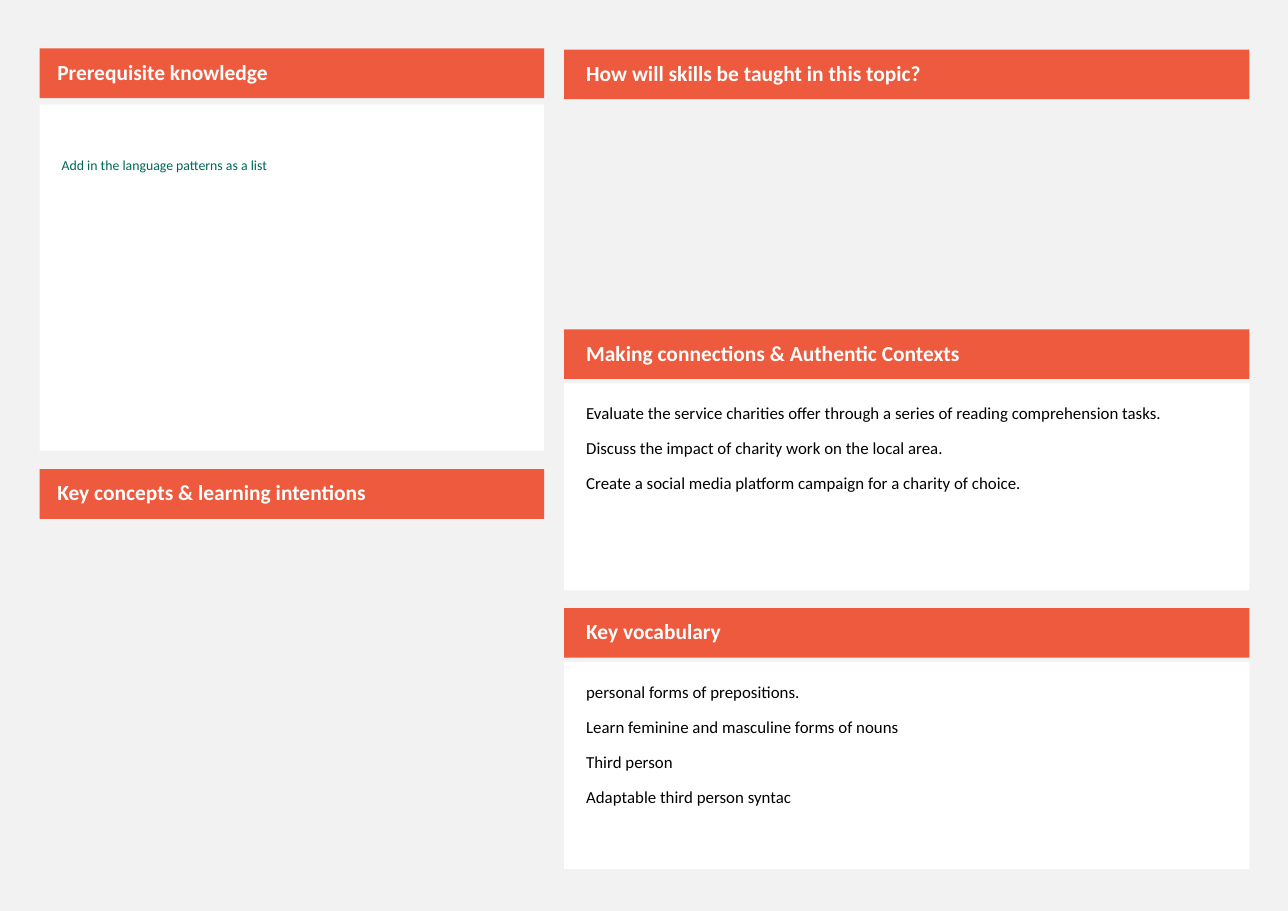
from pptx import Presentation
from pptx.dml.color import RGBColor
from pptx.enum.shapes import MSO_SHAPE
from pptx.enum.text import MSO_ANCHOR, MSO_AUTO_SIZE, PP_ALIGN
from pptx.oxml.xmlchemy import OxmlElement
from pptx.util import Inches, Pt

RECT = MSO_SHAPE.RECTANGLE
TOP, MIDDLE = MSO_ANCHOR.TOP, MSO_ANCHOR.MIDDLE
NO_FIT = MSO_AUTO_SIZE.NONE
LEFT = PP_ALIGN.LEFT

HUES = {"page": "F2F2F2", "bar": "ED5A3E", "card": "FFFFFF",
        "head": "FFFFFF", "text": "000000", "hint": "006758"}

PARA = {"alignment": LEFT, "line_spacing": 0.9, "space_before": Pt(11),
        "space_after": Pt(0)}
HEAD = {"name": "Calibri", "size": Pt(14), "bold": True}
TEXT = {"name": "Calibri", "size": Pt(11), "bold": False}
HINT = {**TEXT, "size": Pt(9)}

# Columns: left edge, width, heading inset
WEST = (0.36, 4.58, 0.16)
EAST = (5.12, 6.22, 0.2)
BAR_H = 0.45

# Headings: column, top, wording; the first one is the title
HEADS = [
    (WEST, 0.44, "Prerequisite knowledge"),
    (WEST, 4.26, "Key concepts & learning intentions"),
    (EAST, 0.45, "How will skills be taught in this topic?"),
    (EAST, 2.99, "Making connections & Authentic Contexts"),
    (EAST, 5.52, "Key vocabulary"),
]

# Cards: column, top, height, top inset, font, colour, lines
CARDS = [
    (WEST, 0.95, 3.14, 0.49, HINT, "hint",
     ["Add in the language patterns as a list"]),
    (EAST, 3.48, 1.88, 0.2, TEXT, "text",
     ["Evaluate the service charities offer through a series of "
      "reading comprehension tasks.",
      "Discuss the impact of charity work on the local area.",
      "Create a social media platform campaign for a charity of choice."]),
    (EAST, 6.01, 1.88, 0.2, TEXT, "text",
     ["personal forms of prepositions.",
      "Learn feminine and masculine forms of nouns",
      "Third person",
      "Adaptable third person syntac"]),
]


def apply(item, form):
    for key, value in form.items():
        setattr(item, key, value)


def tint(fill, hue):
    fill.solid()
    fill.fore_color.rgb = RGBColor.from_string(HUES[hue])


def style(shape, box, hue):
    """Place a shape and give it a plain fill."""
    sides = ("left", "top", "width", "height")
    apply(shape, dict(zip(sides, map(Inches, box))))
    tint(shape.fill, hue)
    shape.line.fill.background()
    shape.shadow.inherit = False


def write(shape, lines, font, hue, insets, anchor):
    """Fill a shape with one unbulleted paragraph per line."""
    frame = shape.text_frame
    sides = ("margin_left", "margin_top", "margin_right", "margin_bottom")
    apply(frame, dict(zip(sides, map(Inches, insets))))
    apply(frame, {"word_wrap": True, "auto_size": NO_FIT,
                  "vertical_anchor": anchor, "text": "\n".join(lines)})
    for para in frame.paragraphs:
        apply(para, PARA)
        props = para._p.get_or_add_pPr()
        props.set("marL", "0")
        props.set("indent", "0")
        props.append(OxmlElement("a:buNone"))
        for run in para.runs:
            apply(run.font, font)
            run.font.color.rgb = RGBColor.from_string(HUES[hue])


def add_head(shape, col, top, label):
    left, width, inset = col
    style(shape, (left, top, width, BAR_H), "bar")
    write(shape, [label], HEAD, "head", (inset, 0.05, 0.1, 0.05), MIDDLE)


def add_card(shape, col, top, height, inset, font, hue, lines):
    left, width, _ = col
    style(shape, (left, top, width, height), "card")
    write(shape, lines, font, hue, (0.2, inset, 0.2, 0.2), TOP)


def main():
    deck = Presentation()
    deck.slide_width, deck.slide_height = Inches(11.69), Inches(8.27)
    slide = deck.slides.add_slide(deck.slide_layouts[4])
    tint(slide.background.fill, "page")
    title, *slots = slide.placeholders

    # White cards in the body placeholders
    for slot, card in zip(slots, CARDS):
        add_card(slot, *card)
    for slot in slots[len(CARDS):]:
        slot.element.getparent().remove(slot.element)

    # Orange heading bars
    add_head(title, *HEADS[0])
    for head in HEADS[1:]:
        bar = slide.shapes.add_shape(RECT, 0, 0, 0, 0)
        add_head(bar, *head)

    deck.save("out.pptx")


if __name__ == "__main__":
    main()
